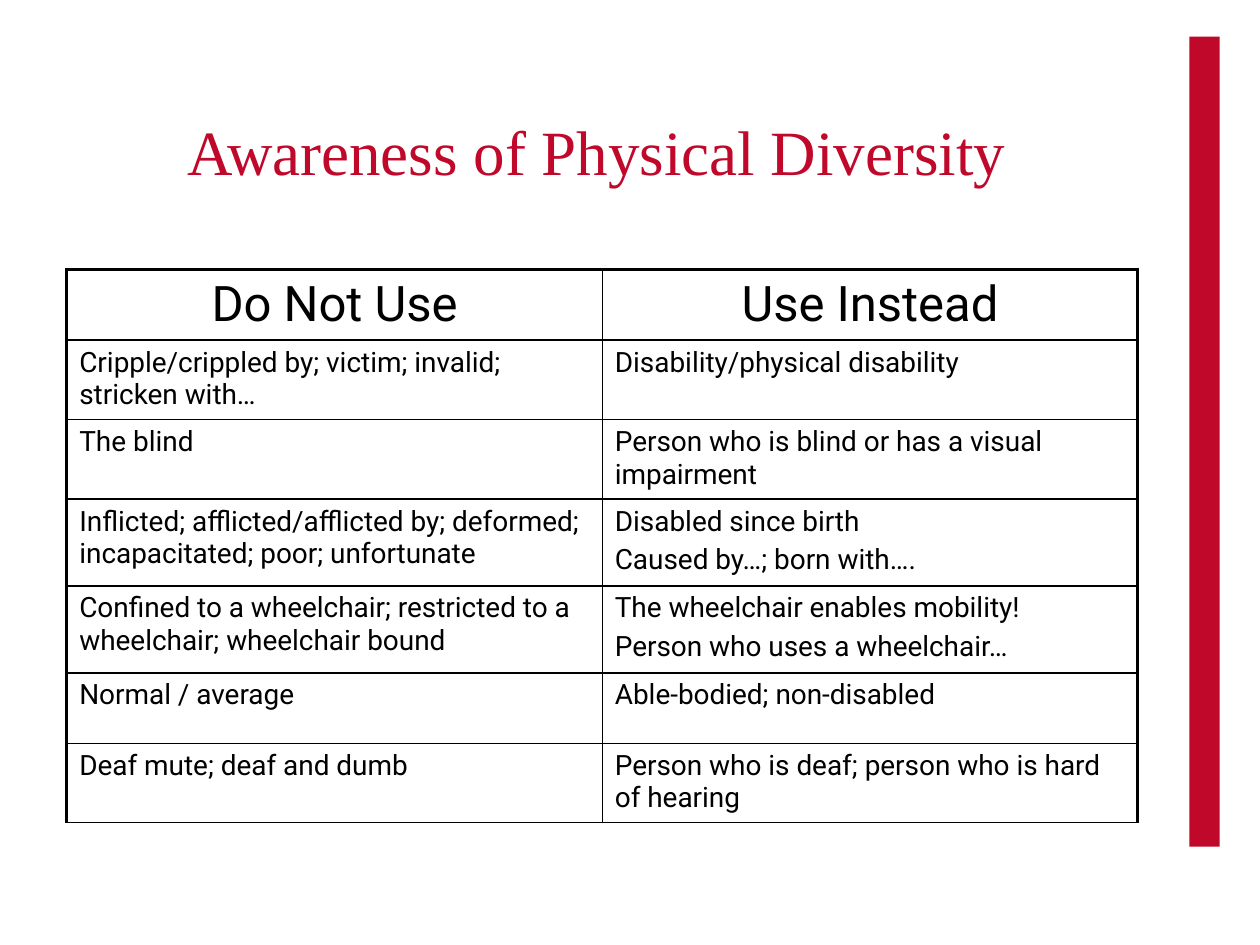
from lxml import etree
from pptx import Presentation
from pptx.dml.color import RGBColor
from pptx.enum.shapes import MSO_SHAPE
from pptx.enum.text import MSO_ANCHOR, PP_ALIGN
from pptx.oxml.ns import qn
from pptx.util import Inches, Pt

RECT = MSO_SHAPE.RECTANGLE
BOTTOM = MSO_ANCHOR.BOTTOM
LEFT, CENTER = PP_ALIGN.LEFT, PP_ALIGN.CENTER
COLORS = {"red": "C0082B", "ink": "000000"}
THIN, THICK = 1, 2.25


def add_run(para, text, font, size, color):
    run = para.add_run()
    run.text = text
    run.font.name = font
    run.font.size = Pt(size)
    run.font.color.rgb = RGBColor.from_string(COLORS[color])


def add_edge(cell, side, width):
    props = cell._tc.get_or_add_tcPr()
    line = etree.SubElement(props, qn("a:ln" + side), w=str(Pt(width)))
    fill = etree.SubElement(line, qn("a:solidFill"))
    etree.SubElement(fill, qn("a:srgbClr"), val=COLORS["ink"])


deck = Presentation()
deck.slide_width, deck.slide_height = Inches(10), Inches(7.5)
slide = deck.slides.add_slide(deck.slide_layouts[5])

# Red side bar
bar = slide.shapes.add_shape(RECT, Inches(9.44), Inches(0.29), Inches(0.24), Inches(6.43))
bar.shadow.inherit = False
bar.fill.solid()
bar.fill.fore_color.rgb = RGBColor.from_string(COLORS["red"])
bar.line.fill.background()

# Title
title = slide.shapes.title
title.left, title.top = Inches(0.89), Inches(0.76)
title.width, title.height = Inches(7.69), Inches(0.78)
title.text_frame.vertical_anchor = BOTTOM
para = title.text_frame.paragraphs[0]
para.alignment = CENTER
add_run(para, "Awareness of Physical Diversity", "Times New Roman", 36, "red")

# Table of terms: row height, then the paragraphs of each column
rows = [
    (0.56, ["Do Not Use"], ["Use Instead"]),
    (0.63, ["Cripple/crippled by; victim; invalid; stricken with…"],
     ["Disability/physical disability"]),
    (0.63, ["The blind"], ["Person who is blind or has a visual impairment"]),
    (0.69, ["Inflicted; afflicted/afflicted by; deformed; incapacitated; poor; unfortunate"],
     ["Disabled since birth", "Caused by…; born with…."]),
    (0.69, ["Confined to a wheelchair; restricted to a wheelchair; wheelchair bound"],
     ["The wheelchair enables mobility!", "Person who uses a wheelchair…"]),
    (0.56, ["Normal / average"], ["Able-bodied; non-disabled"]),
    (0.63, ["Deaf mute; deaf and dumb"],
     ["Person who is deaf; person who is hard of hearing"]),
]
high = sum(row[0] for row in rows)
table = slide.shapes.add_table(len(rows), 2, Inches(0.53), Inches(2.14),
                               Inches(8.5), Inches(high)).table
table.first_row = table.horz_banding = False
for col in table.columns:
    col.width = Inches(4.25)

for r, (tall, *texts) in enumerate(rows):
    table.rows[r].height = Inches(tall)
    size, align = (28, CENTER) if r == 0 else (16, LEFT)
    for c, lines in enumerate(texts):
        cell = table.cell(r, c)
        # Thick outer edges at the left, right and top
        add_edge(cell, "L", THICK if c == 0 else THIN)
        add_edge(cell, "R", THICK if c == 1 else THIN)
        add_edge(cell, "T", THICK if r == 0 else THIN)
        add_edge(cell, "B", THIN)
        cell.fill.background()
        frame = cell.text_frame
        for n, line in enumerate(lines):
            para = frame.add_paragraph() if n else frame.paragraphs[0]
            para.alignment = align
            if n:
                para.space_before = Pt(0.2 * size)
            add_run(para, line, "Roboto", size, "ink")

deck.save("out.pptx")
